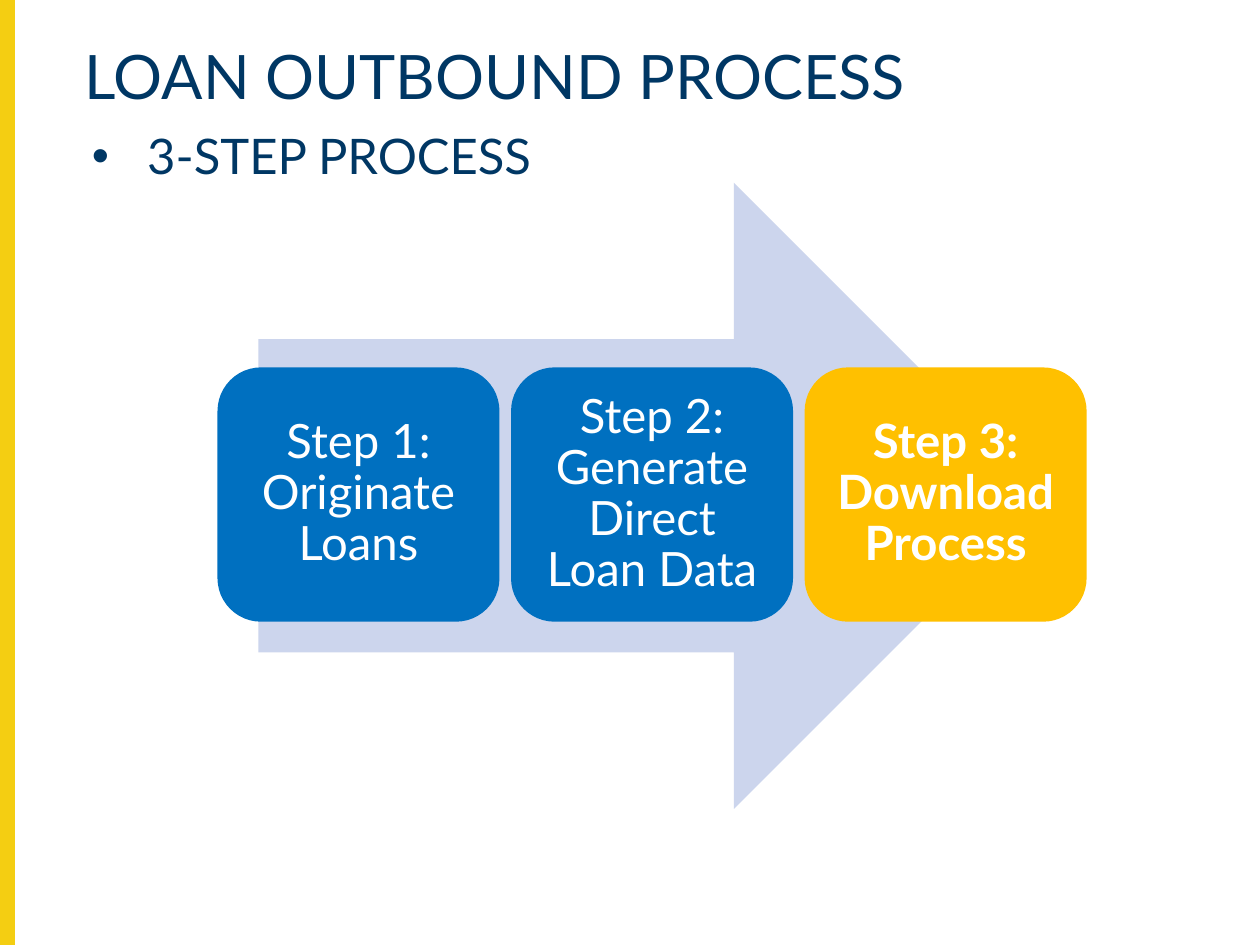
from lxml import etree
from pptx import Presentation, util as u
from pptx.dml.color import RGBColor
from pptx.enum import shapes, text
from pptx.oxml.ns import qn

HUES = {"navy": "003764", "gold": "F4CE12", "pale": "CCD5ED",
        "blue": "0070C0", "amber": "FFC000", "white": "FFFFFF"}
COLS, ROWS = 100, 75
KINDS = shapes.MSO_SHAPE
ALIGN = text.PP_ALIGN
ANCHOR = text.MSO_ANCHOR


def hue(name):
    return RGBColor.from_string(HUES[name])


def write(frame, words, size, color="navy", bold=False, align=ALIGN.LEFT,
          anchor=ANCHOR.TOP, inset=(0.1, 0.05), before=0):
    frame.word_wrap = True
    frame.auto_size = text.MSO_AUTO_SIZE.NONE
    frame.vertical_anchor = anchor
    frame.margin_left = frame.margin_right = u.Inches(inset[0])
    frame.margin_top = frame.margin_bottom = u.Inches(inset[1])
    para = frame.paragraphs[0]
    para.alignment, para.line_spacing = align, 0.9
    para.space_before = u.Pt(before)
    run = para.add_run()
    run.text = words
    font = run.font
    font.name, font.size, font.bold = "Lato", u.Pt(size), bold
    font.color.rgb = hue(color)
    return para


class Deck:
    """Holds the style and current slide, placing elements on a 100 by 75 grid."""

    def __init__(self):
        self.file = Presentation()
        self.file.slide_width, self.file.slide_height = u.Inches(10), u.Inches(7.5)
        self.slide = self.file.slides.add_slide(self.file.slide_layouts[5])

    def area(self, left, top, wide, high):
        col, row = self.file.slide_width / COLS, self.file.slide_height / ROWS
        return [round(n) for n in (left * col, top * row, wide * col, high * row)]

    def title(self, words, *spot):
        box = self.slide.shapes.title
        box.left, box.top, box.width, box.height = self.area(*spot)
        write(box.text_frame, words, 35)

    def bullet(self, words, *spot):
        box = self.slide.shapes.add_textbox(*self.area(*spot))
        props = write(box.text_frame, words, 28, before=10)._p.get_or_add_pPr()
        props.set("marL", str(u.Inches(0.5)))
        props.set("indent", str(u.Inches(-0.44)))
        etree.SubElement(props, qn("a:buFont")).set("typeface", "Arial")
        etree.SubElement(props, qn("a:buChar")).set("char", "•")

    def shape(self, kind, fill, *spot, edge=0):
        item = self.slide.shapes.add_shape(kind, *self.area(*spot))
        item.shadow.inherit = False
        item.fill.solid()
        item.fill.fore_color.rgb = hue(fill)
        if edge:
            item.line.color.rgb = hue(fill)
            item.line.width = u.Pt(edge)
        else:
            item.line.fill.background()
        return item

    def step(self, words, fill, bold, *spot):
        card = self.shape(KINDS.ROUNDED_RECTANGLE, fill, *spot, edge=2)
        write(card.text_frame, words, 27, "white", bold, ALIGN.CENTER,
              ANCHOR.MIDDLE, (0.11, 0.11))


def main():
    deck = Deck()
    deck.shape(KINDS.RECTANGLE, "gold", 0, 0, 1.1, ROWS, edge=1)
    deck.title("LOAN OUTBOUND PROCESS", 5.7, 3.2, 90.8, 8.6)
    deck.bullet("3-STEP PROCESS", 5.7, 10, 91.2, 57.2)
    deck.shape(KINDS.RIGHT_ARROW, "pale", 20.5, 14.5, 62.6, 49.7)
    steps = [("Step 1: Originate Loans", "blue", False),
             ("Step 2: Generate Direct Loan Data", "blue", False),
             ("Step 3: Download Process", "amber", True)]
    for i, (words, fill, bold) in enumerate(steps):
        deck.step(words, fill, bold, 17.4 + 23.3 * i, 29.3, 22.1, 19.9)
    deck.file.save("out.pptx")


if __name__ == "__main__":
    main()
